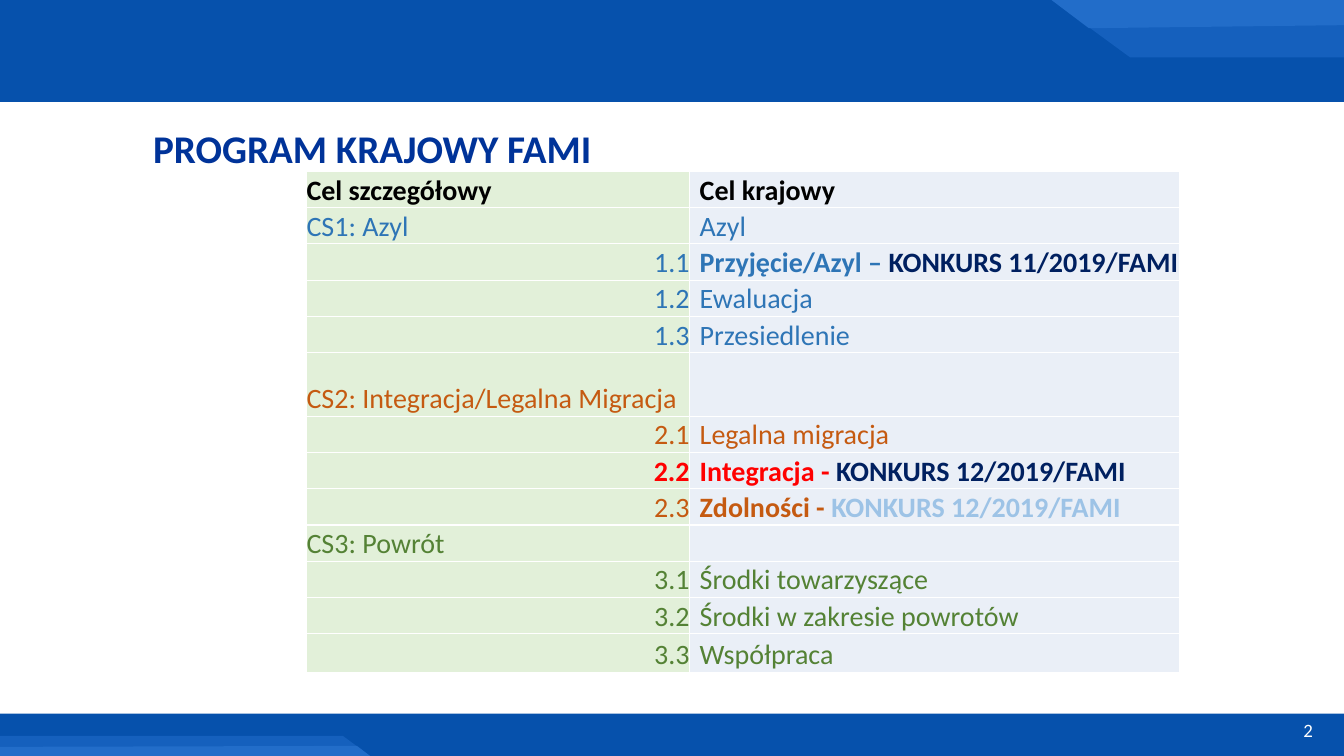
from lxml import etree
from pptx import Presentation
from pptx.dml.color import RGBColor
from pptx.enum.shapes import MSO_SHAPE
from pptx.enum.text import MSO_ANCHOR, PP_ALIGN
from pptx.oxml.ns import qn
from pptx.util import Inches, Pt

RECTANGLE = MSO_SHAPE.RECTANGLE
LEFT, RIGHT = PP_ALIGN.LEFT, PP_ALIGN.RIGHT
TOP, BOTTOM = MSO_ANCHOR.TOP, MSO_ANCHOR.BOTTOM

FONT = "Calibri"
WHITE, BLACK, NAVY, RED = "FFFFFF", "000000", "002060", "FF0000"
BLUE, ORANGE, GREEN, PALE_BLUE = "2E75B6", "C55A11", "548235", "9DC3E6"
BAND, BAND_MIDDLE, BAND_LIGHT = "0651AC", "1560BD", "226DC9"
TITLE_COLOR = "003399"
COLUMN_FILLS = ["E2F0D9", "EAEFF7"]

BANDS = [(0, -0.03, 13.33, 1.04), (0, 7.08, 13.33, 0.42)]
FACETS = [
    (BAND_MIDDLE, [(13.33, -0.03), (10.39, -0.03), (11.21, 0.57), (13.33, 0.57)]),
    (BAND_LIGHT, [(13.33, -0.03), (10.39, -0.03), (10.8, 0.28), (13.33, 0.25)]),
    (BAND_MIDDLE, [(0, 7.5), (3.67, 7.5), (3.4, 7.3), (0, 7.3)]),
    (BAND_LIGHT, [(0, 7.5), (3.67, 7.5), (3.54, 7.4), (-0.01, 7.41)]),
]

# Each cell is a list of spans: (text, colour, bold)
GOALS = [
    ([("Cel szczegółowy", BLACK, True)], [("Cel krajowy", BLACK, True)]),
    ([("CS1: Azyl", BLUE, False)], [("Azyl", BLUE, False)]),
    ([("1.1", BLUE, False)],
     [("Przyjęcie/Azyl – ", BLUE, True), ("KONKURS 11/2019/FAMI", NAVY, True)]),
    ([("1.2", BLUE, False)], [("Ewaluacja", BLUE, False)]),
    ([("1.3", BLUE, False)], [("Przesiedlenie", BLUE, False)]),
    ([("CS2: Integracja/Legalna Migracja", ORANGE, False)], []),
    ([("2.1", ORANGE, False)], [("Legalna migracja", ORANGE, False)]),
    ([("2.2", RED, True)],
     [("Integracja - ", RED, True), ("KONKURS 12/2019/FAMI", NAVY, True)]),
    ([("2.3", ORANGE, False)],
     [("Zdolności - ", ORANGE, True), ("KONKURS 12/2019/FAMI", PALE_BLUE, True)]),
    ([("CS3: Powrót", GREEN, False)], []),
    ([("3.1", GREEN, False)], [("Środki towarzyszące", GREEN, False)]),
    ([("3.2", GREEN, False)], [("Środki w zakresie powrotów", GREEN, False)]),
    ([("3.3", GREEN, False)], [("Współpraca", GREEN, False)]),
]
TABLE_LEFT, TABLE_TOP = 3.04, 1.7
COLUMN_WIDTHS = [3.8, 4.86]
ROW_HEIGHTS = [0.36] * 5 + [0.63] + [0.36] * 6 + [0.38]


def color(hex_text):
    return RGBColor.from_string(hex_text)


def paint(shape, fill):
    shape.shadow.inherit = False
    shape.fill.solid()
    shape.fill.fore_color.rgb = color(fill)
    shape.line.fill.background()


def add_facet(page, fill, corners):
    points = [(Inches(x), Inches(y)) for x, y in corners]
    builder = page.shapes.build_freeform(*points[0], scale=1.0)
    builder.add_line_segments(points[1:], close=True)
    paint(builder.convert_to_shape(), fill)


def write(paragraph, spans, size, align=LEFT, indent=0, line_spacing=None):
    """Fill one paragraph with (text, colour, bold) spans."""
    paragraph.alignment = align
    if indent:
        paragraph._p.get_or_add_pPr().set("marL", str(Inches(indent)))
    if line_spacing:
        paragraph.line_spacing = line_spacing
    paragraph.font.size = Pt(size)
    for text, ink, bold in spans:
        span = paragraph.add_run()
        span.text = text
        span.font.name = FONT
        span.font.size = Pt(size)
        span.font.bold = bold
        span.font.color.rgb = color(ink)


def add_text(page, place, spans, **text_format):
    box = page.shapes.add_textbox(*map(Inches, place))
    box.text_frame.word_wrap = True
    box.text_frame.vertical_anchor = TOP
    write(box.text_frame.paragraphs[0], spans, **text_format)


def style_cell(cell, fill):
    cell.vertical_anchor = BOTTOM
    cell.margin_left = cell.margin_right = cell.margin_top = cell.margin_bottom = 0
    properties = cell._tc.get_or_add_tcPr()
    for side in ("a:lnL", "a:lnR", "a:lnT", "a:lnB"):
        border = etree.SubElement(properties, qn(side), w=str(Pt(1)))
        solid = etree.SubElement(border, qn("a:solidFill"))
        etree.SubElement(solid, qn("a:srgbClr"), val=WHITE)
    cell.fill.solid()
    cell.fill.fore_color.rgb = color(fill)


def add_goal_table(page):
    frame = page.shapes.add_table(
        len(GOALS), len(COLUMN_WIDTHS), Inches(TABLE_LEFT), Inches(TABLE_TOP),
        Inches(sum(COLUMN_WIDTHS)), Inches(sum(ROW_HEIGHTS)))
    table = frame.table
    table.first_row = table.horz_banding = False
    for column, width in zip(table.columns, COLUMN_WIDTHS):
        column.width = Inches(width)
    for row, height, goal in zip(table.rows, ROW_HEIGHTS, GOALS):
        row.height = Inches(height)
        for index, (cell, spans) in enumerate(zip(row.cells, goal)):
            style_cell(cell, COLUMN_FILLS[index])
            is_number = index == 0 and spans[0][0][0].isdigit()
            write(cell.text_frame.paragraphs[0], spans, size=20,
                  align=RIGHT if is_number else LEFT, indent=0.1 * index)


def main():
    deck = Presentation()
    deck.slide_width, deck.slide_height = Inches(13.33), Inches(7.5)
    page = deck.slides.add_slide(deck.slide_layouts[6])
    for place in BANDS:
        paint(page.shapes.add_shape(RECTANGLE, *map(Inches, place)), BAND)
    for fill, corners in FACETS:
        add_facet(page, fill, corners)
    add_text(page, (12.18, 7.08, 0.94, 0.33), [("2", WHITE, False)],
             size=13.5, align=RIGHT)
    add_text(page, (1.42, 1.24, 11.91, 0.62),
             [("PROGRAM KRAJOWY FAMI", TITLE_COLOR, True)],
             size=28, line_spacing=0.9)
    add_goal_table(page)
    deck.save("out.pptx")


if __name__ == "__main__":
    main()
